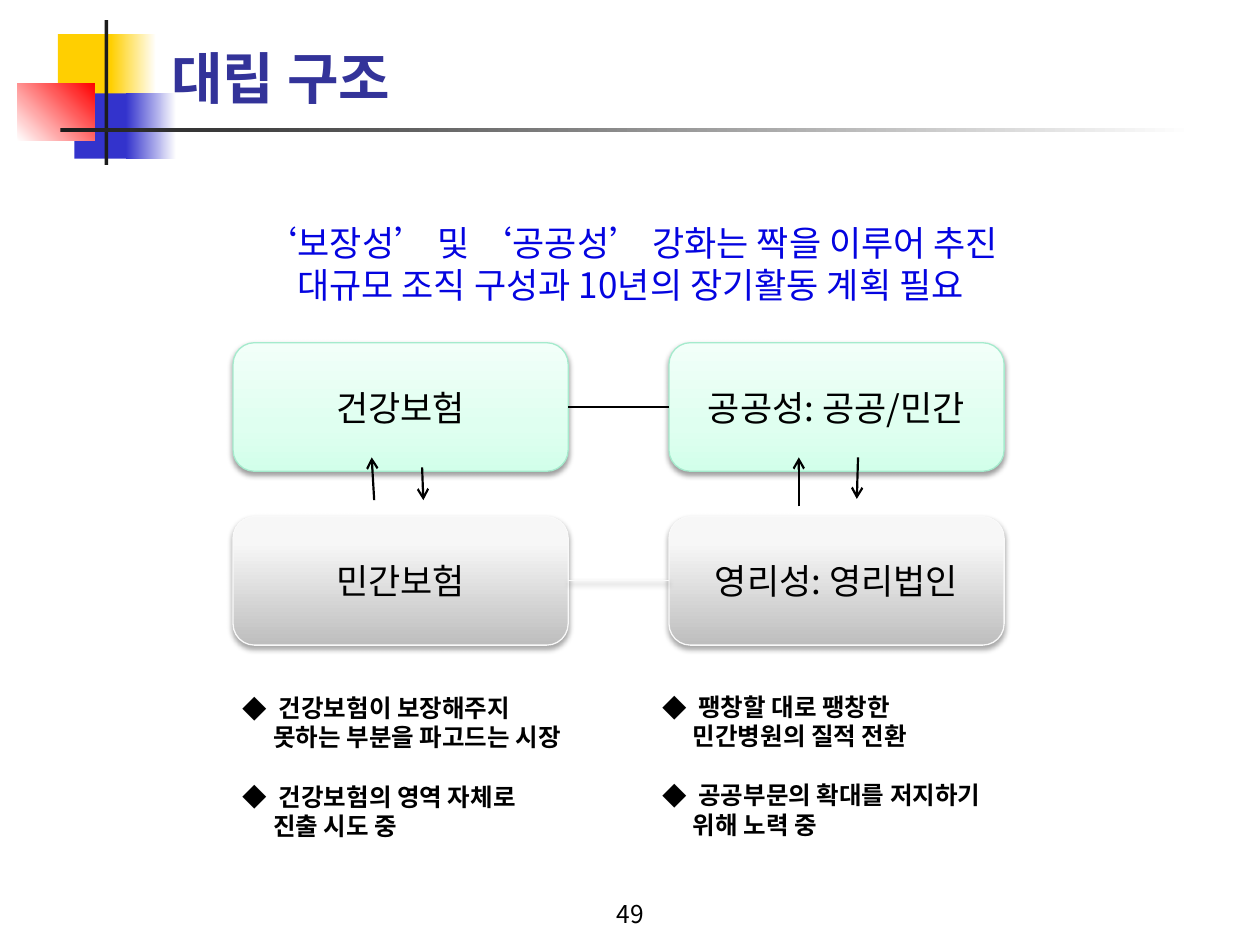
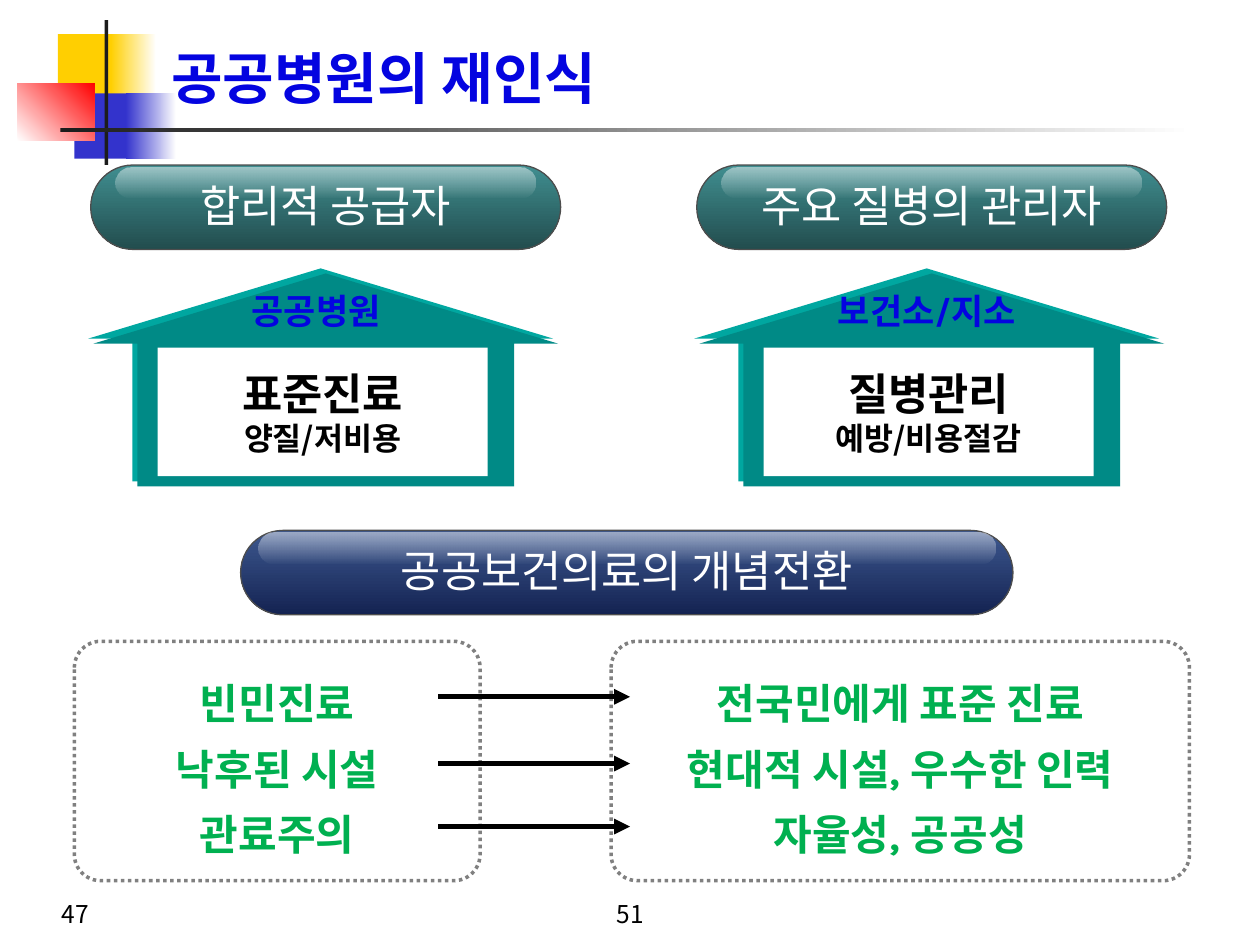
"""Build two slides on public health care: opposing structures and public hospitals."""
from pptx import Presentation
from pptx.dml.color import RGBColor
from pptx.enum.dml import MSO_LINE
from pptx.enum.shapes import MSO_CONNECTOR as CONN, MSO_SHAPE as SHAPE
from pptx.enum.text import MSO_ANCHOR as ANCHOR, MSO_AUTO_SIZE as AUTO, PP_ALIGN as ALIGN
from pptx.oxml import parse_xml
from pptx.oxml.ns import nsdecls, qn
from pptx.util import Inches, Pt

C = {
    "white": "FFFFFF", "black": "000000", "ink": "1C1C1C", "yellow": "FFCF01",
    "indigo": "3333CC", "red": "FF0000", "title": "333399", "blue": "0404E0",
    "mint": "D2FFEA", "mint_mid": "DFFFF0", "mint_light": "F2FFF9", "mint_line": "A5EBCD",
    "gray": "BEBEBE", "gray_mid": "F7F7F7", "gray_light": "F8F8F8", "gray_line": "F9F9F9",
    "teal": "408E90", "teal_dark": "224D4E", "navy": "3D588F", "navy_dark": "142352",
    "pill_line": "4D4D4D", "house": "008A86", "house_edge": "00A7A0",
    "dots": "808080", "green": "00B050",
}
NOTO, KARLA = "Noto Sans CJK KR", "Karla"
NS = nsdecls("a")
SHADOW = ('<a:outerShdw %s blurRad="39400" dist="%d" dir="5400000" algn="ctr" rotWithShape="0">'
          '<a:srgbClr val="000000"><a:alpha val="%d"/></a:srgbClr></a:outerShdw>')
GREEN_SHADOW = SHADOW % (NS, 20300, 38000)
GRAY_SHADOW = SHADOW % (NS, 22900, 35000)
TEXT_SHADOW = ('<a:effectLst %s><a:outerShdw dist="25400" dir="2700000" algn="ctr">'
               '<a:srgbClr val="000000"/></a:outerShdw></a:effectLst>' % NS)
GLOSS = ([(0, "white", 50), (100, "white", 0)], 90)


def write(tf, lines, size, color="black", bold=False, font=NOTO, align=ALIGN.CENTER,
          anchor=ANCHOR.TOP, spacing=1.2, wrap=True, shadow=False):
    for key, value in {"word_wrap": wrap, "auto_size": AUTO.NONE, "vertical_anchor": anchor}.items():
        setattr(tf, key, value)
    for i, line in enumerate(lines):
        text, pts = line if isinstance(line, tuple) else (line, size)
        p = tf.paragraphs[0] if i == 0 else tf.add_paragraph()
        p.alignment = align
        p.line_spacing = Pt(round(pts * spacing, 1))
        r = p.add_run()
        r.text = text
        for key, value in {"size": Pt(pts), "bold": bold, "name": font}.items():
            setattr(r.font, key, value)
        r.font.color.rgb = RGBColor.from_string(C[color])
        rPr = r.font._element
        rPr.find(qn("a:latin")).addnext(parse_xml(f'<a:ea {NS} typeface="{NOTO}"/>'))
        if shadow:
            rPr.find(qn("a:solidFill")).addnext(parse_xml(TEXT_SHADOW))


def add_box(slide, at, kind=None, fill=None, line=None, width=0.75, adj=(), effect=None,
            lines=(), **fmt):
    place = [Inches(v) for v in at]
    if kind is None:
        s = slide.shapes.add_textbox(*place)
    else:
        s = slide.shapes.add_shape(kind, *place)
        s.shadow.inherit = False
        for i, value in enumerate(adj):
            s.adjustments[i] = value
        if isinstance(fill, str):
            s.fill.solid()
            s.fill.fore_color.rgb = RGBColor.from_string(C[fill])
        else:
            stops, angle = fill
            gs = "".join(f'<a:gs pos="{pos * 1000}"><a:srgbClr val="{C[c]}">'
                         f'<a:alpha val="{a * 1000}"/></a:srgbClr></a:gs>' for pos, c, a in stops)
            s.fill.background()
            spPr = s.element.spPr
            spPr.replace(spPr.find(qn("a:noFill")), parse_xml(
                f'<a:gradFill {NS} rotWithShape="1"><a:gsLst>{gs}</a:gsLst>'
                f'<a:lin ang="{angle * 60000}" scaled="0"/></a:gradFill>'))
        if line:
            s.line.color.rgb = RGBColor.from_string(C[line])
            s.line.width = Pt(width)
        else:
            s.line.fill.background()
        if effect:
            s.element.spPr.find(qn("a:effectLst")).append(parse_xml(effect))
    if lines:
        write(s.text_frame, lines, **fmt)
    return s


prs = Presentation()
prs.slide_width, prs.slide_height = Inches(10), Inches(7.5)
layout = prs.slide_layouts[5]
slides = []
for title, color, font, page in [("대립 구조", "title", NOTO, "49"),
                                 ("공공병원의 재인식", "blue", "Arial", "51")]:
    slide = prs.slides.add_slide(layout)
    slides.append(slide)
    sp = slide.shapes.title
    for key, value in {"left": 1.26, "top": 0.23, "width": 8.52, "height": 0.7}.items():
        setattr(sp, key, Inches(value))
    write(sp.text_frame, [title], 32, color, True, font, ALIGN.LEFT, ANCHOR.BOTTOM)
    add_box(slide, (3.42, 7.11, 3.17, 0.31), lines=[page], size=14, anchor=ANCHOR.BOTTOM)
structure, hospital = slides

master_tree = prs.slide_master.shapes._spTree
for i, (at, start, end, angle) in enumerate([
        ((0.46, 0.27, 0.48, 0.52), "yellow", None, 0),
        ((0.88, 0.27, 0.36, 0.52), "yellow", "white", 0),
        ((0.59, 0.74, 0.46, 0.52), "indigo", None, 0),
        ((1, 0.74, 0.4, 0.52), "indigo", "white", 0),
        ((0.14, 0.66, 0.61, 0.46), "white", "red", 315),
        ((0.83, 0.16, 0.03, 1.15), "ink", None, 0),
        ((0.48, 1.02, 9, 0.03), "ink", "white", 0)]):
    fill = ([(0, start, 100), (100, end, 100)], angle) if end else start
    s = add_box(structure, at, SHAPE.RECTANGLE, fill)
    s.element.nvSpPr.cNvPr.set("id", str(20 + i))
    master_tree.append(s.element)

add_box(structure, (1.42, 1.71, 7.17, 0.77), size=20, color="blue",
        lines=["‘보장성’ 및 ‘공공성’ 강화는 짝을 이루어 추진", "대규모 조직 구성과 10년의 장기활동 계획 필요"])
mint = ([(0, "mint", 100), (35, "mint_mid", 100), (100, "mint_light", 100)], 270)
gray = ([(0, "gray", 100), (80, "gray_mid", 100), (100, "gray_light", 100)], 270)
links = []
for top, fill, line, width, effect, names in [
        (2.72, mint, "mint_line", 1.25, GREEN_SHADOW, ("건강보험", "공공성: 공공/민간")),
        (4.1, gray, "gray_line", 0.75, GRAY_SHADOW, ("민간보험", "영리성: 영리법인"))]:
    pair = [add_box(structure, (left, top, 2.66, 1.02), SHAPE.ROUNDED_RECTANGLE, fill, line,
                    effect=effect, lines=[name], size=20, anchor=ANCHOR.MIDDLE, wrap=False)
            for left, name in zip((1.85, 5.31), names)]
    links.append((pair, width))

for at, items in [
        ((1.83, 5.45, 2.73, 1.28), (" 건강보험이 보장해주지 못하는 부분을 파고드는 시장",
                                    " 건강보험의 영역 자체로 진출 시도 중")),
        ((5.16, 5.44, 2.73, 1.28), (" 팽창할 대로 팽창한 민간병원의 질적 전환",
                                    " 공공부문의 확대를 저지하기 위해 노력 중"))]:
    s = add_box(structure, at, lines=items, size=14, bold=True, align=ALIGN.LEFT)
    for p in s.text_frame.paragraphs:
        pPr = p._p.get_or_add_pPr()
        pPr.set("marL", str(Inches(0.24)))
        pPr.set("indent", str(-Inches(0.24)))
        p.space_after = Pt(17)
        pPr.append(parse_xml(f'<a:buFont {NS} typeface="{NOTO}"/>'))
        pPr.append(parse_xml(f'<a:buChar {NS} char="◆"/>'))

add_box(hospital, (0.39, 7.11, 2.08, 0.31), lines=["47"], size=14,
        align=ALIGN.LEFT, anchor=ANCHOR.BOTTOM)
for left, top, width, inset, light, dark, text, font in [
        (0.72, 1.31, 3.73, 0.2, "teal", "teal_dark", "합리적 공급자", NOTO),
        (5.53, 1.31, 3.73, 0.2, "teal", "teal_dark", "주요 질병의 관리자", NOTO),
        (1.91, 4.21, 6.13, 0.14, "navy", "navy_dark", "공공보건의료의 개념전환", KARLA)]:
    add_box(hospital, (left, top, width, 0.67), SHAPE.ROUNDED_RECTANGLE,
            ([(0, light, 100), (100, dark, 100)], 90), "pill_line", adj=[0.5])
    add_box(hospital, (left + inset, top + 0.02, width - 2 * inset, 0.24),
            SHAPE.ROUNDED_RECTANGLE, GLOSS, adj=[0.5])
    add_box(hospital, (left + 0.2, top + 0.06, width - 0.4, 0.52), lines=[text], size=25,
            color="white", font=font, shadow=True)

for left, label, label_at, name, note in [
        (0.74, "공공병원", (1.85, 2.25, 1.32, 0.44), "표준진료", "양질/저비용"),
        (5.55, "보건소/지소", (6.47, 2.25, 1.77, 0.44), "질병관리", "예방/비용절감")]:
    for shift, fill in [(0.04, "house_edge"), (0, "house")]:
        add_box(hospital, (left - shift, 2.17 - shift, 3.69, 1.69), SHAPE.UP_ARROW, fill,
                adj=[0.81, 0.33])
    add_box(hospital, (left + 0.51, 2.76, 2.62, 1.02), SHAPE.RECTANGLE, "white",
            lines=[(name, 25), (note, 18)], size=25, bold=True, anchor=ANCHOR.MIDDLE, wrap=False)
    add_box(hospital, label_at, lines=[label], size=20, color="blue", bold=True, font=KARLA,
            wrap=False)

half_white = ([(0, "white", 50), (100, "white", 50)], 0)
for left, width, lines in [
        (0.59, 3.22, ["빈민진료", "낙후된 시설", "관료주의"]),
        (4.85, 4.59, ["전국민에게 표준 진료", "현대적 시설, 우수한 인력", "자율성, 공공성"])]:
    s = add_box(hospital, (left, 5.09, width, 1.9), SHAPE.ROUNDED_RECTANGLE, half_white, "dots", 2,
                [0.11], lines=lines, size=24, color="green", bold=True, font=KARLA,
                anchor=ANCHOR.MIDDLE, spacing=1.56, wrap=False)
    s.line.dash_style = MSO_LINE.ROUND_DOT

arrows = [(structure, ends, 1.25, "arrow") for ends in [
    (2.97, 3.97, 2.95, 3.63), (3.35, 3.71, 3.36, 3.97),
    (6.34, 4.02, 6.34, 3.63), (6.81, 3.63, 6.8, 3.96)]]
arrows += [(hospital, (3.48, y, 5, y), 3, "triangle") for y in (5.53, 6.06, 6.56)]
for slide, ends, width, head in arrows:
    s = slide.shapes.add_connector(CONN.STRAIGHT, *[Inches(v) for v in ends])
    s.line.color.rgb = RGBColor.from_string(C["black"])
    s.line.width = Pt(width)
    s.line._ln.append(parse_xml(f'<a:tailEnd {NS} type="{head}"/>'))
    s.element.spPr.append(parse_xml(f"<a:effectLst {NS}/>"))

for (pair, width), color, effect in zip(links, ("black", "gray_line"), ("", GRAY_SHADOW)):
    s = structure.shapes.add_connector(CONN.STRAIGHT, 0, 0, 0, 0)
    s.begin_connect(pair[0], 3)
    s.end_connect(pair[1], 1)
    s.line.color.rgb = RGBColor.from_string(C[color])
    s.line.width = Pt(width)
    s.element.spPr.append(parse_xml(f"<a:effectLst {NS}>{effect}</a:effectLst>"))

prs.save("out.pptx")
